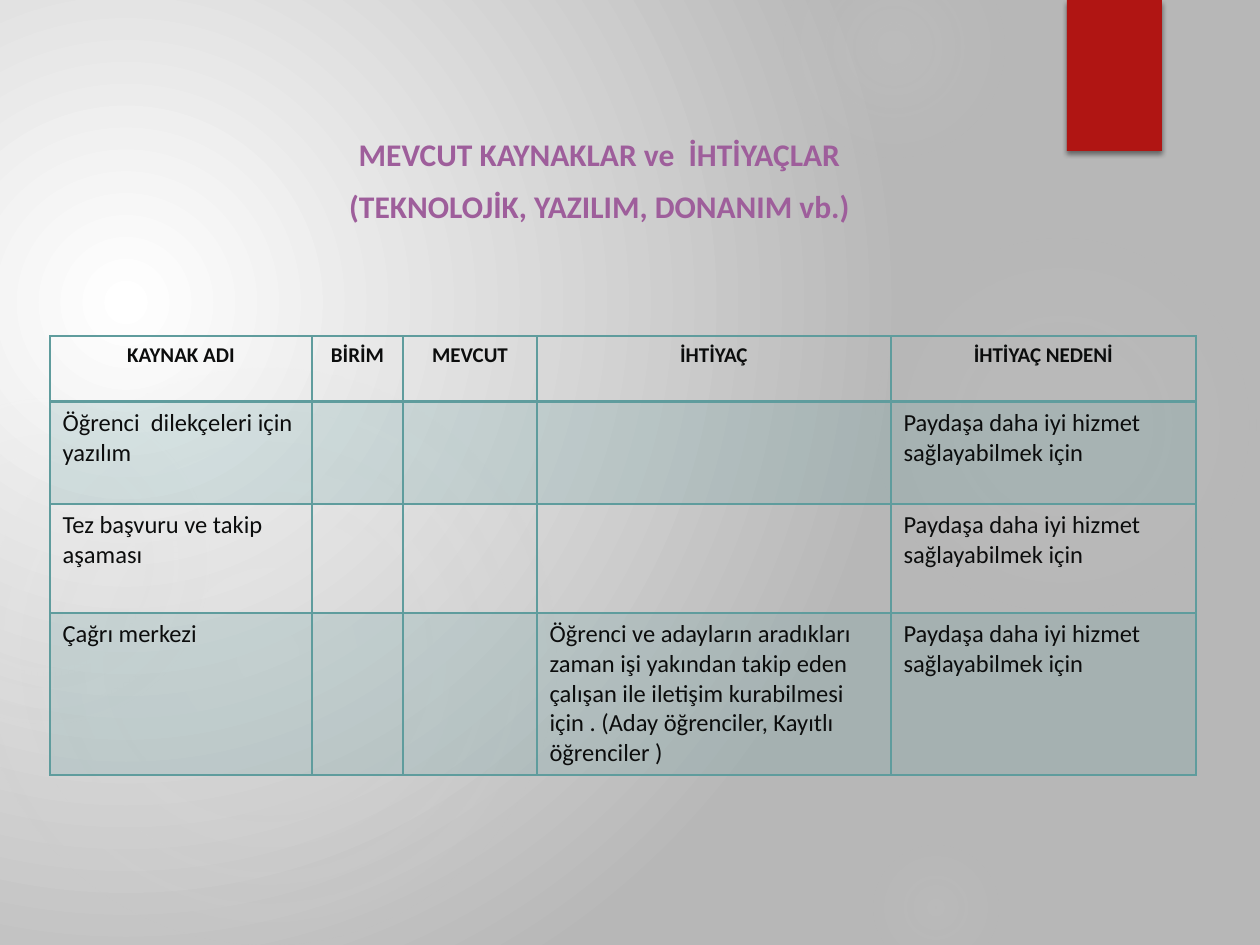
import pptx
import pptx.dml.color
import pptx.enum.shapes
import pptx.enum.text
import pptx.oxml
import pptx.oxml.ns
import pptx.util

COLORS = {
    "white": "FFFFFF", "backdrop": "B7B7B7", "glow": "D9D9D9", "ribbon": "B01513",
    "shadow": "000000", "title": "9E5E9B", "teal": "5F9C9D", "ink": "0C0D0D",
}
TEXT = {
    "title": {"size": 18, "bold": True, "color": "title"},
    "header": {"size": 12, "bold": True, "color": "ink"},
    "body": {"size": 14, "bold": False, "color": "ink"},
}
FONT = "Calibri"
CENTER = pptx.enum.text.PP_ALIGN.CENTER
TINT = 20

GLOWS = [
    (868, 231, 388, [(0, 7), (36, 6), (69, 0)]),
    (784, -63, 220, [(0, 14), (36, 7), (73, 0)]),
    (868, 840, 136, [(0, 9), (36, 5), (66, 0)]),
    (-21, 368, 577, [(0, 11), (36, 10), (75, 0)]),
    (-116, 399, 325, [(0, 8), (36, 8), (72, 0)]),
]
REASON = "Paydaşa daha iyi hizmet sağlayabilmek için"
COLUMNS = [262, 91, 134, 354, 305]
ROWS = [66, 102, 109, 162]
CELLS = [
    ["KAYNAK ADI", "BİRİM", "MEVCUT", "İHTİYAÇ", "İHTİYAÇ NEDENİ"],
    ["Öğrenci  dilekçeleri için yazılım", "", "", "", REASON],
    ["Tez başvuru ve takip aşaması", "", "", "", REASON],
    ["Çağrı merkezi", "", "",
     "Öğrenci ve adayların aradıkları zaman işi yakından takip eden çalışan ile "
     "iletişim kurabilmesi için . (Aday öğrenciler, Kayıtlı öğrenciler )", REASON],
]


def px(length):
    return pptx.util.Emu(round(length * 914400 / 126))


def rgb(name):
    return pptx.dml.color.RGBColor.from_string(COLORS[name])


def xml(tag, content, **attributes):
    listed = " ".join(f'{key}="{value}"' for key, value in attributes.items())
    namespace = pptx.oxml.ns.nsdecls("a")
    return pptx.oxml.parse_xml(f"<a:{tag} {namespace} {listed}>{content}</a:{tag}>")


def color_xml(name, alpha=100):
    return f'<a:srgbClr val="{COLORS[name]}"><a:alpha val="{alpha * 1000}"/></a:srgbClr>'


class SlideBuilder:
    def __init__(self, deck):
        self.page = deck.slides.add_slide(deck.slide_layouts[5])

    def replace_fill(self, element, fill):
        solid = element.find(".//" + pptx.oxml.ns.qn("a:solidFill"))
        solid.getparent().replace(solid, fill)

    def radial(self, stops, focus):
        steps = "".join(f'<a:gs pos="{position * 1000}">{color_xml(name, alpha)}</a:gs>'
                        for position, name, alpha in stops)
        edges = " ".join(f'{side}="{value * 1000}"' for side, value in zip("ltrb", focus))
        return xml("gradFill", f'<a:gsLst>{steps}</a:gsLst><a:path path="circle">'
                   f"<a:fillToRect {edges}/></a:path>", rotWithShape=1)

    def background(self, stops, focus):
        self.page.background.fill.solid()
        self.replace_fill(self.page.element, self.radial(stops, focus))

    def shape(self, kind, left, top, width, height, color):
        shape = self.page.shapes.add_shape(kind, px(left), px(top), px(width), px(height))
        shape.shadow.inherit = False
        shape.fill.solid()
        shape.fill.fore_color.rgb = rgb(color)
        shape.line.fill.background()
        return shape

    def glow(self, left, top, size, stops):
        oval = self.shape(pptx.enum.shapes.MSO_SHAPE.OVAL, left, top, size, size, "glow")
        fill = self.radial([(position, "glow", alpha) for position, alpha in stops], [50] * 4)
        self.replace_fill(oval.element.spPr, fill)

    def ribbon(self, left, top, width, height):
        shape = self.shape(pptx.enum.shapes.MSO_SHAPE.RECTANGLE,
                           left, top, width, height, "ribbon")
        effects = shape.element.spPr.find(pptx.oxml.ns.qn("a:effectLst"))
        effects.append(xml("outerShdw", color_xml("shadow", 45), blurRad=pptx.util.Pt(3),
                           dist=pptx.util.Pt(2), dir=90 * 60000, rotWithShape=0))

    def style(self, para, look, **layout):
        values = TEXT[look]
        for name, value in layout.items():
            setattr(para, name, value)
        font = {"name": FONT, "size": pptx.util.Pt(values["size"]), "bold": values["bold"]}
        for span in para.runs:
            for name, value in font.items():
                setattr(span.font, name, value)
            span.font.color.rgb = rgb(values["color"])

    def title(self, left, top, width, height, lines):
        box = self.page.shapes.title
        place = {"left": left, "top": top, "width": width, "height": height}
        for name, value in place.items():
            setattr(box, name, px(value))
        frame = box.text_frame
        frame.text = "\n".join(lines)
        frame.word_wrap = True
        frame.auto_size = pptx.enum.text.MSO_AUTO_SIZE.NONE
        frame.vertical_anchor = pptx.enum.text.MSO_ANCHOR.BOTTOM
        for para in frame.paragraphs:
            self.style(para, "title", alignment=CENTER, line_spacing=1.1,
                       space_before=pptx.util.Pt(0), space_after=pptx.util.Pt(6))
        box.element.getparent().append(box.element)

    def borders(self, cell, row):
        widths = {"L": 1, "R": 1, "T": 2 if row == 1 else 1, "B": 2 if row == 0 else 1}
        properties = cell._tc.get_or_add_tcPr()
        for index, (side, width) in enumerate(widths.items()):
            line = xml(f"ln{side}", f"<a:solidFill>{color_xml('teal')}</a:solidFill>",
                       w=pptx.util.Pt(width))
            properties.insert(index, line)

    def cell(self, cell, row, text):
        cell.text = text
        para = cell.text_frame.paragraphs[0]
        if row == 0:
            self.style(para, "header", alignment=CENTER)
        else:
            self.style(para, "body")
        if row % 2:
            cell.fill.solid()
            cell.fill.fore_color.rgb = rgb("teal")
            tint = xml("solidFill", color_xml("teal", TINT))
            self.replace_fill(cell._tc.tcPr, tint)
        else:
            cell.fill.background()
        self.borders(cell, row)

    def table(self, left, top, columns, rows, cells):
        frame = self.page.shapes.add_table(len(rows), len(columns), px(left), px(top),
                                           px(sum(columns)), px(sum(rows)))
        table = frame.table
        for column, width in zip(table.columns, columns):
            column.width = px(width)
        for row, height in zip(table.rows, rows):
            row.height = px(height)
        for row, texts in enumerate(cells):
            for column, text in enumerate(texts):
                self.cell(table.cell(row, column), row, text)


def main():
    deck = pptx.Presentation()
    deck.slide_width, deck.slide_height = px(1260), px(945)
    builder = SlideBuilder(deck)
    builder.background([(0, "white", 100), (100, "backdrop", 100)], [45, 65, 125, 100])
    for glow in GLOWS:
        builder.glow(*glow)
    builder.ribbon(1067, 0, 95, 151)
    builder.title(193, 125, 813, 106, ["MEVCUT KAYNAKLAR ve  İHTİYAÇLAR",
                                       "(TEKNOLOJİK, YAZILIM, DONANIM vb.)"])
    builder.table(50, 336, COLUMNS, ROWS, CELLS)
    deck.save("out.pptx")


if __name__ == "__main__":
    main()
